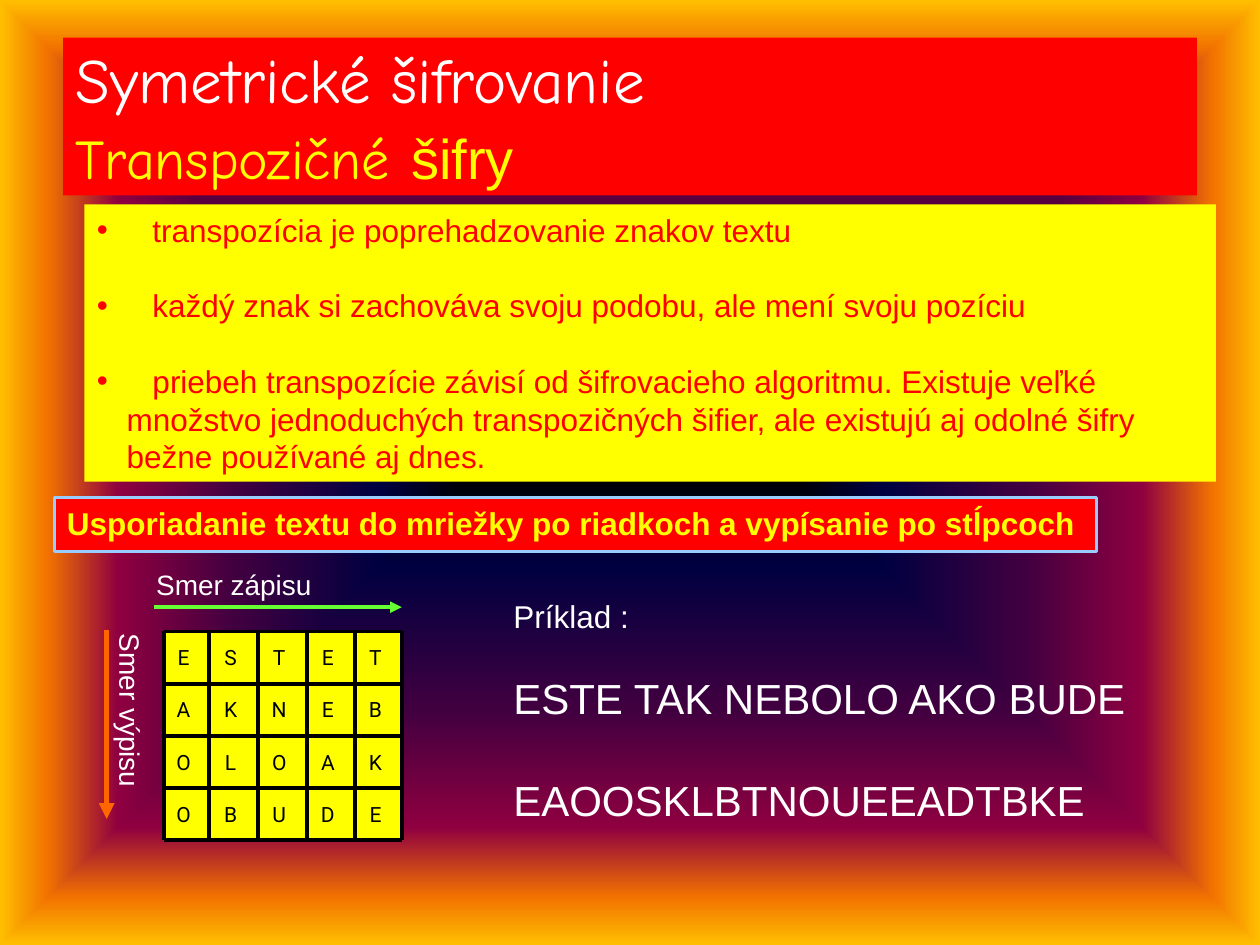
"""Build a slide on transposition ciphers with a letter grid and a worked example."""
from dataclasses import dataclass

from lxml import etree
from pptx import Presentation
from pptx.dml.color import RGBColor
from pptx.enum.shapes import MSO_CONNECTOR, MSO_SHAPE
from pptx.enum.text import MSO_ANCHOR, MSO_AUTO_SIZE, PP_ALIGN
from pptx.oxml.ns import qn
from pptx.util import Cm, Pt

STRAIGHT = MSO_CONNECTOR.STRAIGHT
RECT = MSO_SHAPE.RECTANGLE
MIDDLE, TOP = MSO_ANCHOR.MIDDLE, MSO_ANCHOR.TOP
LEFT, CENTER = PP_ALIGN.LEFT, PP_ALIGN.CENTER
NO_FIT = MSO_AUTO_SIZE.NONE

COLORS = {
    "red": "FF0000", "yellow": "FFFF00", "white": "FFFFFF", "black": "000000",
    "sky": "99CCFF", "green": "66FF33", "orange": "FF6600",
}
GLOW = {0: "000000", 20: "000040", 50: "400040", 75: "8F0040", 90: "F27300", 100: "FFBF00"}
GRID = ["ESTET", "AKNEB", "OLOAK", "OBUDE"]
GRID_X = [3.3, 4.22, 5.2, 6.18, 7.16, 8.1]
GRID_Y = [12.73 + 1.05 * i for i in range(len(GRID) + 1)]
BULLETS = [
    "transpozícia je poprehadzovanie znakov textu",
    "každý znak si zachováva svoju podobu, ale mení svoju pozíciu",
    "priebeh transpozície závisí od šifrovacieho algoritmu. Existuje veľké množstvo "
    "jednoduchých transpozičných šifier, ale existujú aj odolné šifry bežne používané aj dnes.",
]


@dataclass
class Box:
    left: float
    top: float
    width: float
    height: float

    def lengths(self) -> list:
        return [Cm(v) for v in (self.left, self.top, self.width, self.height)]


@dataclass
class Run:
    text: str
    size: float
    color: str
    font: str = "Arial"
    bold: bool = False


@dataclass
class Line:
    start: tuple
    end: tuple
    color: str = "black"
    width: float = 2.25
    arrow: bool = False


@dataclass
class Label:
    text: str
    box: Box
    rotation: int = 0


ARROWS = [
    Line((3.1, 12.24), (8.1, 12.24), "green", 2.25, True),
    Line((2.15, 12.7), (2.15, 16.51), "orange", 3, True),
]
LABELS = [
    Label("Smer zápisu", Box(2.9, 11.31, 5.21, 0.94)),
    Label("Smer výpisu", Box(0.72, 13.96, 3.81, 0.94), 90),
]
EXAMPLE = [("Príklad :", 18, 0), ("ESTE TAK NEBOLO AKO BUDE", 24, 21.5), ("EAOOSKLBTNOUEEADTBKE", 24, 29)]


def rgb(name: str) -> RGBColor:
    return RGBColor.from_string(COLORS[name])


def paint(target, color: str) -> None:
    target.fill.solid()
    target.fill.fore_color.rgb = rgb(color)


def place(sp, box: Box) -> None:
    for name, value in zip(("left", "top", "width", "height"), box.lengths()):
        setattr(sp, name, value)


def set_frame(tf, anchor, **extra) -> None:
    values = {"word_wrap": True, "auto_size": NO_FIT, "vertical_anchor": anchor, **extra}
    for name, value in values.items():
        setattr(tf, name, value)


def add_run(p, run: Run) -> None:
    r = p.add_run()
    r.text = run.text
    values = {"size": Pt(run.size), "name": run.font, "bold": run.bold}
    for name, value in values.items():
        setattr(r.font, name, value)
    r.font.color.rgb = rgb(run.color)


def next_paragraph(tf, index: int):
    return tf.paragraphs[0] if index == 0 else tf.add_paragraph()


def set_background(s) -> None:
    s.background.fill.solid()
    props = s.element.find(".//" + qn("p:bgPr"))
    grad = etree.Element(qn("a:gradFill"), rotWithShape="0")
    stops = etree.SubElement(grad, qn("a:gsLst"))
    for position, color in GLOW.items():
        stop = etree.SubElement(stops, qn("a:gs"), pos=str(position * 1000))
        etree.SubElement(stop, qn("a:srgbClr"), val=color)
    path = etree.SubElement(grad, qn("a:path"), path="rect")
    etree.SubElement(path, qn("a:fillToRect"), l="50000", t="50000", r="50000", b="50000")
    props.replace(props[0], grad)


def fill_title(sp) -> None:
    place(sp, Box(1.27, 0.76, 22.86, 3.18))
    paint(sp, "red")
    set_frame(sp.text_frame, MIDDLE)
    p = sp.text_frame.paragraphs[0]
    p.alignment = LEFT
    add_run(p, Run("Symetrické šifrovanie", 36, "white", "Comic Neue"))
    p.add_line_break()
    add_run(p, Run("Transpozičné", 32, "yellow", "Comic Neue"))
    add_run(p, Run(" ", 36, "white", "Comic Neue"))
    add_run(p, Run("šifry", 32, "yellow"))


def fill_bullets(sp) -> None:
    place(sp, Box(1.7, 4.12, 22.81, 5.59))
    paint(sp, "yellow")
    tf = sp.text_frame
    set_frame(tf, TOP)
    for i, text in enumerate(BULLETS):
        p = next_paragraph(tf, i)
        p.line_spacing = Pt(21.6)
        p.space_before = Pt(21.6 if i else 0)
        props = p._p.get_or_add_pPr()
        props.set("marL", str(Cm(0.6)))
        props.set("indent", str(-Cm(0.6)))
        etree.SubElement(props, qn("a:buFont"), typeface="Arial")
        etree.SubElement(props, qn("a:buChar"), char="•")
        tabs = etree.SubElement(props, qn("a:tabLst"))
        etree.SubElement(tabs, qn("a:tab"), pos=str(Cm(1.12)), algn="l")
        add_run(p, Run("\t" + text, 18, "red"))


def add_rect(shapes, box: Box, color: str):
    sp = shapes.add_shape(RECT, *box.lengths())
    sp.shadow.inherit = False
    paint(sp, color)
    sp.line.fill.background()
    return sp


def add_banner(s) -> None:
    sp = add_rect(s.shapes, Box(1.1, 10.03, 21.01, 1.09), "red")
    sp.line.color.rgb = rgb("sky")
    sp.line.width = Pt(1.75)
    set_frame(sp.text_frame, TOP)
    p = sp.text_frame.paragraphs[0]
    p.alignment = LEFT
    text = "Usporiadanie textu do mriežky po riadkoch a vypísanie po stĺpcoch"
    add_run(p, Run(text, 18, "yellow", bold=True))


def add_line(shapes, line: Line) -> None:
    ends = [Cm(v) for v in line.start + line.end]
    cxn = shapes.add_connector(STRAIGHT, *ends)
    cxn.line.color.rgb = rgb(line.color)
    cxn.line.width = Pt(line.width)
    props = cxn.element.spPr
    if line.arrow:
        etree.SubElement(props.find(qn("a:ln")), qn("a:tailEnd"), type="triangle")
    etree.SubElement(props, qn("a:effectLst"))


def add_grid(s) -> None:
    shapes = s.shapes.add_group_shape().shapes
    for row, letters in enumerate(GRID):
        for col, letter in enumerate(letters):
            x, y = GRID_X[col], GRID_Y[row]
            sp = add_rect(shapes, Box(x, y, GRID_X[col + 1] - x, GRID_Y[row + 1] - y), "yellow")
            set_frame(sp.text_frame, MIDDLE, margin_left=0, margin_right=Cm(0.12))
            p = sp.text_frame.paragraphs[0]
            p.alignment = CENTER
            add_run(p, Run(letter, 12, "black", "Roboto"))
    for y in GRID_Y:
        add_line(shapes, Line((GRID_X[0], y), (GRID_X[-1], y)))
    for x in GRID_X:
        add_line(shapes, Line((x, GRID_Y[0]), (x, GRID_Y[-1])))


def add_text(s, box: Box, rows: list, rotation: int = 0) -> None:
    sp = s.shapes.add_textbox(*box.lengths())
    sp.rotation = rotation
    set_frame(sp.text_frame, TOP)
    for i, (text, size, gap) in enumerate(rows):
        p = next_paragraph(sp.text_frame, i)
        p.space_before = Pt(gap)
        add_run(p, Run(text, size, "white"))


def main() -> None:
    prs = Presentation()
    prs.slide_width, prs.slide_height = Cm(25.4), Cm(19.05)
    s = prs.slides.add_slide(prs.slide_layouts[1])
    set_background(s)
    fill_title(s.shapes.title)
    fill_bullets(s.placeholders[1])
    add_grid(s)
    for arrow in ARROWS:
        add_line(s.shapes, arrow)
    for label in LABELS:
        add_text(s, label.box, [(label.text, 16, 0)], label.rotation)
    add_text(s, Box(10.1, 11.92, 13, 4.88), EXAMPLE)
    add_banner(s)
    prs.save("out.pptx")


if __name__ == "__main__":
    main()
